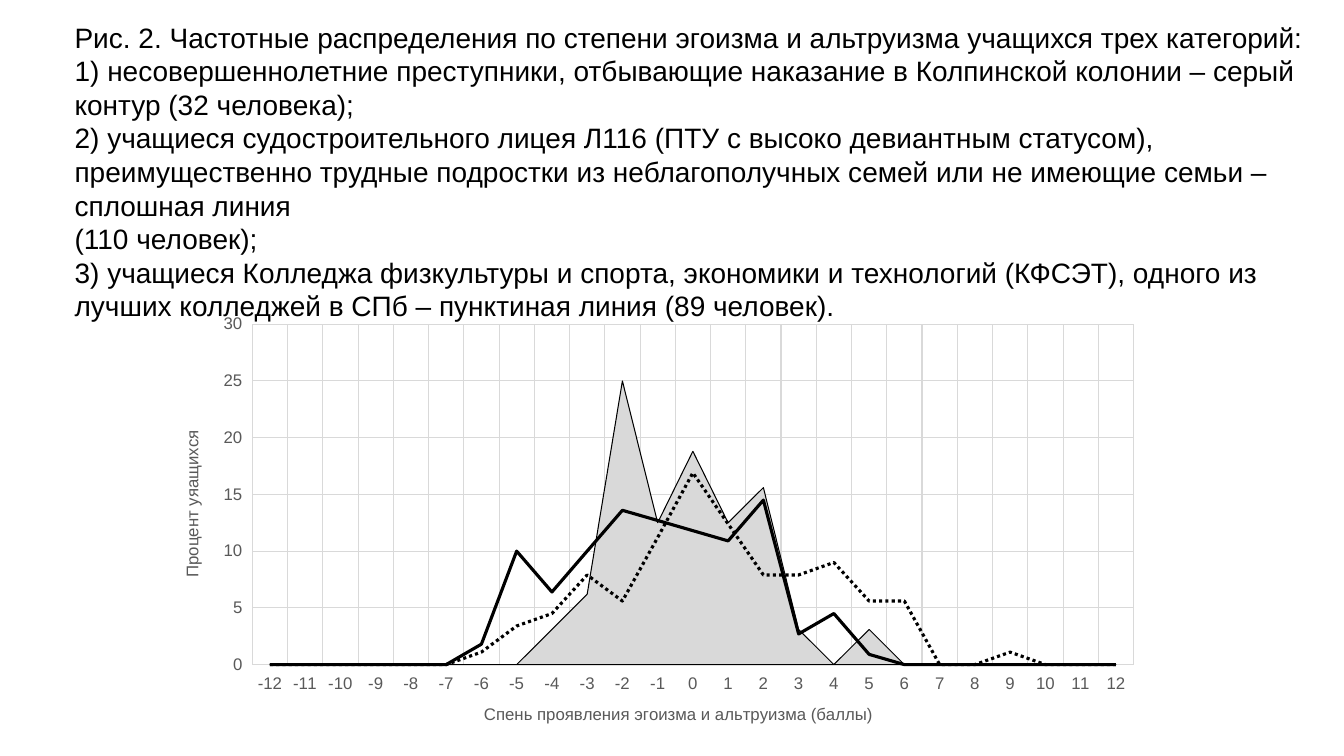
"""Slide with frequency distributions of egoism and altruism for three groups of students."""
from pptx import Presentation
from pptx.chart.data import CategoryChartData
from pptx.dml.color import RGBColor as RGB
from pptx.enum.chart import XL_CHART_TYPE as CT, XL_MARKER_STYLE as MS
from pptx.enum.chart import XL_TICK_LABEL_POSITION as TLP, XL_TICK_MARK as TM
from pptx.enum.dml import MSO_LINE as DASH
from pptx.enum.text import MSO_AUTO_SIZE as FIT
from pptx.oxml import parse_xml
from pptx.oxml.ns import nsdecls, qn
from pptx.util import Cm, Pt

COLORS = {"text": "000000", "axis": "595959", "grid": "D9D9D9", "area": "D9D9D9"}

CAPTION = "\n".join([
    "Рис. 2. Частотные распределения по степени эгоизма и альтруизма учащихся трех категорий: ",
    "1) несовершеннолетние преступники, отбывающие наказание в Колпинской колонии – серый "
    "контур (32 человека);",
    "2) учащиеся судостроительного лицея Л116 (ПТУ с высоко девиантным статусом), "
    "преимущественно трудные подростки из неблагополучных семей или не имеющие семьи – "
    "сплошная линия ",
    "(110 человек);",
    "3) учащиеся Колледжа физкультуры и спорта, экономики и технологий (КФСЭТ), одного из "
    "лучших колледжей в СПб – пунктиная линия (89 человек).",
])

CATEGORIES = [str(score) for score in range(-12, 13)]
SERIES = {
    "Series 1": [0] * 8 + [3.1, 6.2, 25, 12.5, 18.8, 12.5, 15.6, 3.1, 0, 3.1] + [0] * 7,
    "Series 2": [0] * 6 + [1.8, 10, 6.4, 10, 13.6, 12.7, 11.8, 10.9, 14.5, 2.7, 4.5, 0.9]
                + [0] * 7,
    "Series 3": [0] * 6 + [1.1, 3.4, 4.5, 7.9, 5.6, 11.2, 16.9, 12.4, 7.9, 7.9, 9, 5.6, 5.6,
                           0, 0, 1.1, 0, 0, 0],
}
LAYOUT = {"x": 0.076, "y": 0.066, "w": 0.908, "h": 0.775}


class SlideBuilder:
    def __init__(self, prs, font="Arial"):
        self.font = font
        self.s = prs.slides.add_slide(prs.slide_layouts[6])

    def style_font(self, font, size, color):
        for name, value in {"name": self.font, "size": Pt(size), "bold": False}.items():
            setattr(font, name, value)
        font.color.rgb = RGB.from_string(COLORS[color])

    def style_line(self, line, color, width, dash=None):
        line.color.rgb = RGB.from_string(COLORS[color])
        line.width = Pt(width)
        if dash:
            line.dash_style = dash

    def text(self, box, text, size):
        sp = self.s.shapes.add_textbox(*map(Cm, box))
        tf = sp.text_frame
        tf.word_wrap = True
        tf.auto_size = FIT.SHAPE_TO_FIT_TEXT
        p = tf.paragraphs[0]
        p.text = text
        for name in ("space_before", "space_after"):
            setattr(p, name, Pt(6))
        pPr = p._p.get_or_add_pPr()
        pPr.set("marL", str(Cm(0.51)))
        pPr.set("indent", "0")
        for r in p.runs:
            self.style_font(r.font, size, "text")

    def axis(self, axis, title, settings):
        for name, value in settings.items():
            setattr(axis, name, value)
        for name, value in {"has_major_gridlines": True, "major_tick_mark": TM.NONE,
                            "minor_tick_mark": TM.NONE,
                            "tick_label_position": TLP.LOW}.items():
            setattr(axis, name, value)
        self.style_line(axis.major_gridlines.format.line, "grid", 0.75)
        self.style_font(axis.tick_labels.font, 12, "axis")
        tf = axis.axis_title.text_frame
        tf.text = title
        self.style_font(tf.paragraphs[0].runs[0].font, 12, "axis")

    def split_lines(self, area):
        line = parse_xml(f'<c:lineChart {nsdecls("c")}><c:grouping val="standard"/>'
                         '<c:varyColors val="0"/><c:marker val="1"/></c:lineChart>')
        area.addnext(line)
        marker = line.find(qn("c:marker"))
        for ser in area.findall(qn("c:ser"))[1:]:
            for extra in ser.findall(qn("c:invertIfNegative")):
                ser.remove(extra)
            marker.addprevious(ser)
        for ax in area.findall(qn("c:axId")):
            line.append(parse_xml(f'<c:axId {nsdecls("c")} val="{ax.get("val")}"/>'))

    def set_layout(self, plot_area):
        for old in plot_area.findall(qn("c:layout")):
            plot_area.remove(old)
        modes = "".join(f'<c:{k}Mode val="edge"/>' for k in "xy")
        sizes = "".join(f'<c:{k} val="{v}"/>' for k, v in LAYOUT.items())
        plot_area.insert(0, parse_xml(
            f'<c:layout {nsdecls("c")}><c:manualLayout><c:layoutTarget val="inner"/>'
            f'{modes}{sizes}</c:manualLayout></c:layout>'))

    def chart(self, box, x_title, y_title):
        data = CategoryChartData()
        data.categories = CATEGORIES
        for name, values in SERIES.items():
            data.add_series(name, values)
        chart = self.s.shapes.add_chart(CT.AREA_STACKED, *map(Cm, box), data).chart
        chart.has_legend = False
        chart.has_title = False
        self.style_font(chart.font, 12, "text")
        self.axis(chart.category_axis, x_title, {})
        self.axis(chart.value_axis, y_title,
                  {"minimum_scale": 0, "maximum_scale": 30, "major_unit": 5})
        self.style_line(chart.category_axis.format.line, "grid", 0.75)
        chart.value_axis.format.line.fill.background()
        area = chart.plots[0]
        area.vary_by_categories = False
        plot_area = area._element.getparent()
        self.split_lines(area._element)
        self.set_layout(plot_area)
        for cross in plot_area.iter(qn("c:crossBetween")):
            cross.set("val", "between")
        areas, lines = chart.plots
        fmt = areas.series[0].format
        fmt.fill.solid()
        fmt.fill.fore_color.rgb = RGB.from_string(COLORS["area"])
        self.style_line(fmt.line, "text", 0.75)
        for ser, dash in zip(lines.series, (DASH.SOLID, DASH.ROUND_DOT)):
            self.style_line(ser.format.line, "text", 2.25, dash)
            ser.marker.style = MS.NONE
            ser.smooth = False


def main():
    prs = Presentation()
    prs.slide_width, prs.slide_height = Cm(33.87), Cm(19.05)
    slide = SlideBuilder(prs)
    slide.chart((4.5, 7.44, 24.46, 11.07),
                "Спень проявления эгоизма и альтруизма (баллы)", "Процент уяащихся")
    slide.text((1.12, 0.38, 32.26, 7.95), CAPTION, 20)
    prs.save("out.pptx")


if __name__ == "__main__":
    main()
